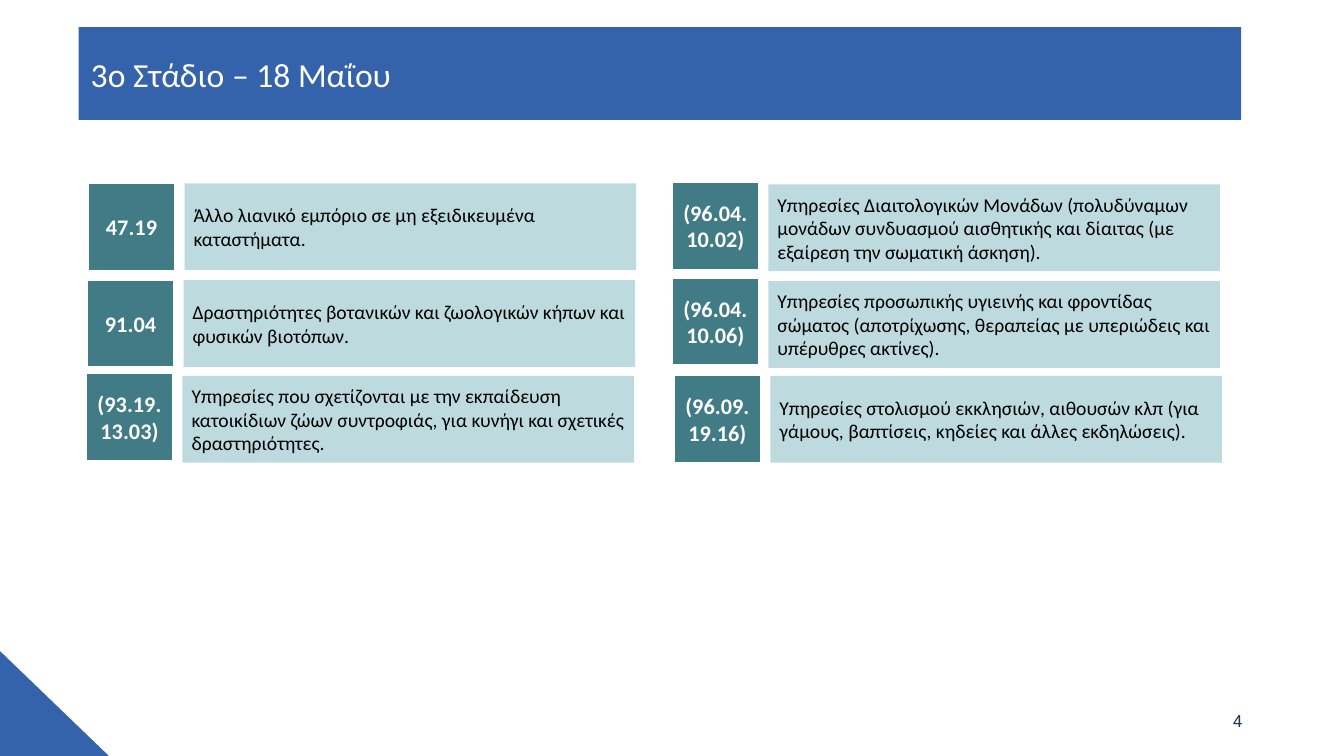
from dataclasses import dataclass

from lxml.etree import SubElement
from pptx import Presentation
from pptx.dml.color import RGBColor
from pptx.enum.shapes import MSO_SHAPE
from pptx.enum.text import MSO_ANCHOR, MSO_AUTO_SIZE, PP_ALIGN
from pptx.oxml.ns import qn
from pptx.shapes.base import BaseShape
from pptx.slide import Slide
from pptx.util import Inches, Pt

BLUE = RGBColor(0x34, 0x62, 0xAB)
TEAL = RGBColor(0x41, 0x7B, 0x85)
PALE_TEAL = RGBColor(0xBD, 0xDA, 0xDF)
NAVY = RGBColor(0x25, 0x33, 0x56)
WHITE = RGBColor(0xFF, 0xFF, 0xFF)
BLACK = RGBColor(0x00, 0x00, 0x00)

CODE_WIDTH = 0.85
DESCRIPTION_OFFSET = 0.95
DESCRIPTION_WIDTH = 4.48
ROW_HEIGHT = 0.86


@dataclass(frozen=True)
class TextStyle:
    font: dict
    align: PP_ALIGN = PP_ALIGN.LEFT
    side_inset: float = 0.1
    end_inset: float = 0.05


@dataclass(frozen=True)
class Activity:
    left: float
    code_top: float
    description_top: float
    code: str
    description: str


TITLE_STYLE = TextStyle(
    {"name": "Calibri", "size": Pt(24), "bold": False}, side_inset=0.12, end_inset=0.02
)
CODE_STYLE = TextStyle(
    {"name": "Calibri", "size": Pt(15.9), "bold": True}, PP_ALIGN.CENTER, 0.04, 0.09
)
DESCRIPTION_STYLE = TextStyle(
    {"name": "Calibri", "size": Pt(14), "bold": False}, side_inset=0.09, end_inset=0.04
)
NUMBER_STYLE = TextStyle(
    {"name": "Roboto", "size": Pt(12), "bold": False}, PP_ALIGN.RIGHT
)

ACTIVITIES = [
    Activity(0.88, 1.82, 1.82, "47.19",
             "Άλλο λιανικό εμπόριο σε μη εξειδικευμένα καταστήματα."),
    Activity(0.87, 2.78, 2.78, "91.04",
             "Δραστηριότητες βοτανικών και ζωολογικών κήπων και φυσικών βιοτόπων."),
    Activity(0.86, 3.71, 3.73, "(93.19. 13.03)",
             "Υπηρεσίες που σχετίζονται με την εκπαίδευση κατοικίδιων ζώων "
             "συντροφιάς, για κυνήγι και σχετικές δραστηριότητες."),
    Activity(6.67, 1.81, 1.83, "(96.04. 10.02)",
             "Υπηρεσίες Διαιτολογικών Μονάδων (πολυδύναμων μονάδων συνδυασμού "
             "αισθητικής και δίαιτας (με εξαίρεση την σωματική άσκηση)."),
    Activity(6.67, 2.76, 2.79, "(96.04.\n10.06)",
             "Υπηρεσίες προσωπικής υγιεινής και φροντίδας σώματος (αποτρίχωσης, "
             "θεραπείας με υπεριώδεις και υπέρυθρες ακτίνες)."),
    Activity(6.69, 3.73, 3.73, "(96.09. 19.16)",
             "Υπηρεσίες στολισμού εκκλησιών, αιθουσών κλπ (για γάμους, βαπτίσεις, "
             "κηδείες και άλλες εκδηλώσεις)."),
]


def write_text(target: BaseShape, text: str, style: TextStyle, color: RGBColor) -> None:
    frame = target.text_frame
    frame.text = text
    frame_format = {
        "word_wrap": True,
        "auto_size": MSO_AUTO_SIZE.NONE,
        "vertical_anchor": MSO_ANCHOR.MIDDLE,
        "margin_left": Inches(style.side_inset),
        "margin_right": Inches(style.side_inset),
        "margin_top": Inches(style.end_inset),
        "margin_bottom": Inches(style.end_inset),
    }
    for attribute, value in frame_format.items():
        setattr(frame, attribute, value)
    for paragraph in frame.paragraphs:
        paragraph.alignment = style.align
        for run in paragraph.runs:
            for attribute, value in style.font.items():
                setattr(run.font, attribute, value)
            run.font.color.rgb = color


def add_block(slide: Slide, preset: MSO_SHAPE, left: float, top: float,
              width: float, height: float, fill: RGBColor) -> BaseShape:
    block = slide.shapes.add_shape(
        preset, Inches(left), Inches(top), Inches(width), Inches(height)
    )
    block.shadow.inherit = False
    block.fill.solid()
    block.fill.fore_color.rgb = fill
    block.line.fill.background()
    return block


def add_title(slide: Slide, text: str) -> None:
    banner = slide.shapes.title
    bounds = {"left": 0.78, "top": 0.27, "width": 11.53, "height": 0.92}
    for attribute, value in bounds.items():
        setattr(banner, attribute, Inches(value))
    geometry = SubElement(banner.element.spPr, qn("a:prstGeom"), prst="snip2DiagRect")
    SubElement(geometry, qn("a:avLst"))
    banner.fill.solid()
    banner.fill.fore_color.rgb = BLUE
    write_text(banner, text, TITLE_STYLE, WHITE)


def add_activity(slide: Slide, activity: Activity) -> None:
    code = add_block(slide, MSO_SHAPE.RECTANGLE, activity.left, activity.code_top,
                     CODE_WIDTH, ROW_HEIGHT, TEAL)
    code.line.color.rgb = WHITE
    code.line.width = Pt(0.75)
    write_text(code, activity.code, CODE_STYLE, WHITE)
    description = add_block(slide, MSO_SHAPE.RECTANGLE,
                            activity.left + DESCRIPTION_OFFSET,
                            activity.description_top,
                            DESCRIPTION_WIDTH, ROW_HEIGHT, PALE_TEAL)
    write_text(description, activity.description, DESCRIPTION_STYLE, BLACK)


def main() -> None:
    presentation = Presentation()
    presentation.slide_width = Inches(13.33)
    presentation.slide_height = Inches(7.5)
    slide = presentation.slides.add_slide(presentation.slide_layouts[5])

    add_block(slide, MSO_SHAPE.RIGHT_TRIANGLE, 0, 6.46, 1.08, 1.04, BLUE)
    add_title(slide, "3o Στάδιο – 18 Μαΐου")
    for activity in ACTIVITIES:
        add_activity(slide, activity)

    page_number = slide.shapes.add_textbox(
        Inches(9.42), Inches(6.95), Inches(3), Inches(0.4)
    )
    write_text(page_number, "4", NUMBER_STYLE, NAVY)
    presentation.save("out.pptx")


if __name__ == "__main__":
    main()
